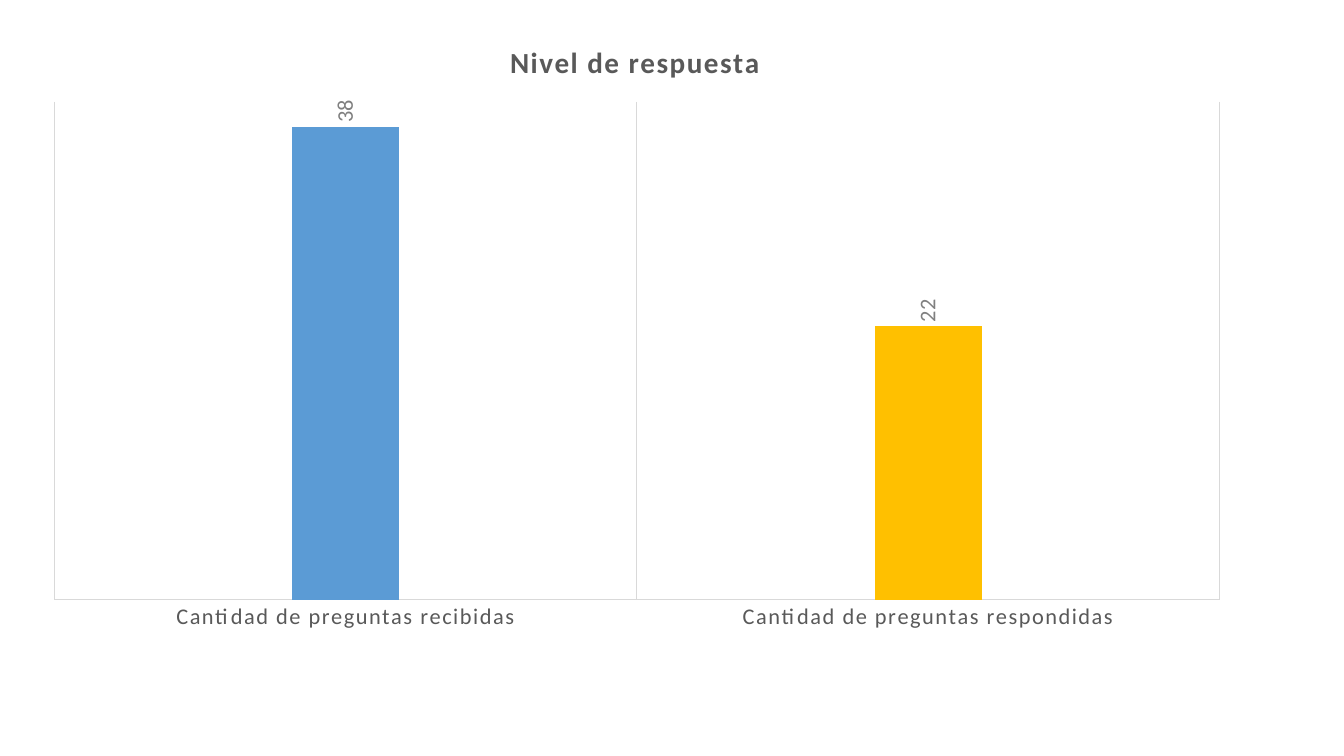
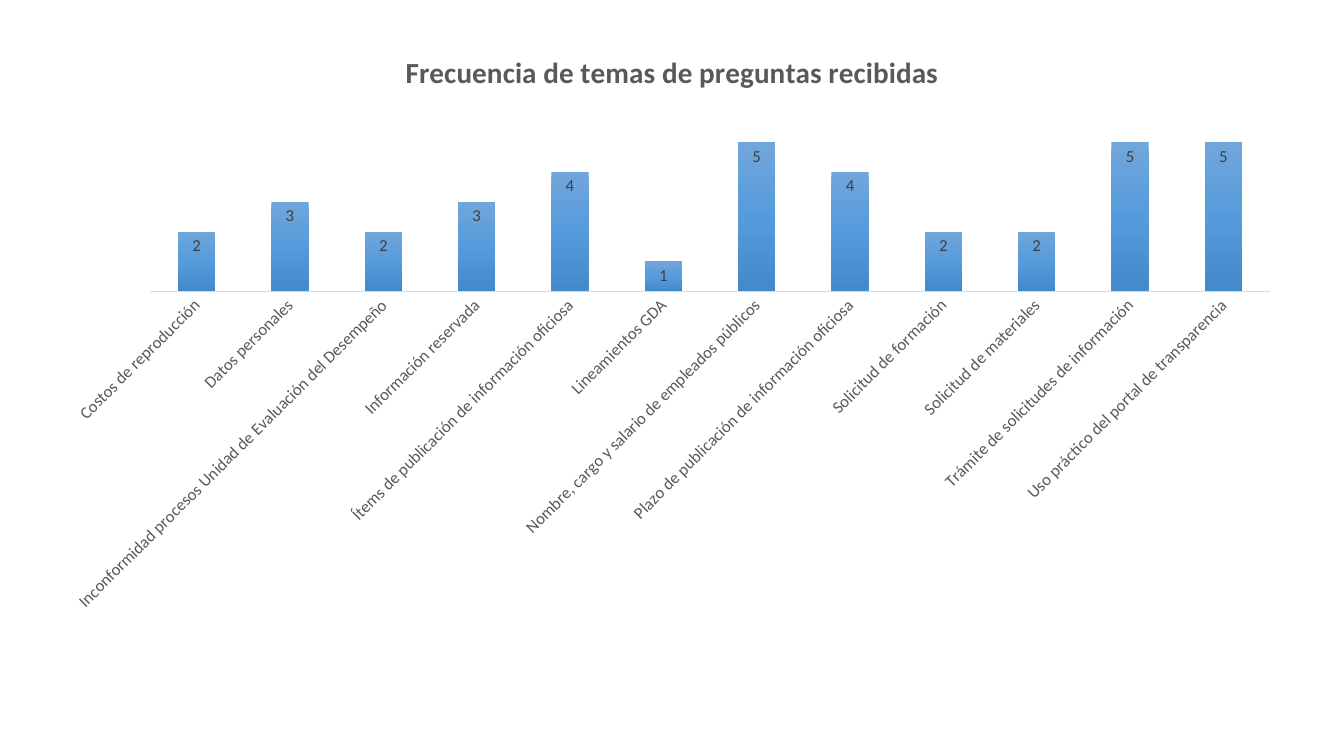
from pptx import Presentation
from pptx.chart.data import CategoryChartData as Data
from pptx.dml.color import RGBColor
from pptx.enum.chart import XL_CHART_TYPE as Kind
from pptx.enum.chart import XL_LABEL_POSITION as Pos
from pptx.enum.chart import XL_TICK_MARK as Tick
from pptx.oxml import parse_xml
from pptx.oxml.ns import nsdecls
from pptx.util import Cm, Pt

FONT = "Calibri"
INK, RULE, BLUE, GOLD = "595959", "D9D9D9", "5B9BD5", "FFC000"


def rgb(code):
    return RGBColor.from_string(code)


def style(font, size, color=INK, bold=False):
    font.name, font.size, font.bold = FONT, Pt(size), bold
    font.color.rgb = rgb(color)


def write(frame, text, space=0, **form):
    """Put one formatted line of text in a frame."""
    frame.text = text
    run = frame.paragraphs[0].runs[0]
    style(run.font, **form)
    if space:
        run.font._element.set("spc", str(space))


def place(parent, index, target, **parts):
    """Give a chart part a fixed place, in fractions of the chart."""
    for old in parent.xpath("c:layout"):
        parent.remove(old)
    inner = '<c:layoutTarget val="inner"/>' if target else ""
    modes = "".join(f'<c:{k}Mode val="edge"/>' for k in "xy")
    sizes = "".join(f'<c:{k} val="{v:.5f}"/>' for k, v in parts.items())
    parent.insert(index, parse_xml(
        f'<c:layout {nsdecls("c")}><c:manualLayout>{inner}{modes}{sizes}'
        '</c:manualLayout></c:layout>'))


def turn(root, where, angle):
    for body in root.xpath(f"{where}/c:txPr/a:bodyPr"):
        body.set("rot", str(angle * 60000))
        body.set("vert", "horz")


def rule(line, width):
    line.color.rgb = rgb(RULE)
    line.width = Pt(width)


def blend(form, stops):
    """Fill a series from top to bottom with several colours."""
    form.fill.gradient()
    grad = form._element.xpath("c:spPr/a:gradFill")[0]
    items = "".join(f'<a:gs pos="{at * 1000}"><a:srgbClr val="{code}"/></a:gs>'
                    for at, code in stops)
    grad.getparent().replace(grad, parse_xml(
        f'<a:gradFill {nsdecls("a")}><a:gsLst>{items}</a:gsLst>'
        '<a:lin ang="5400000" scaled="0"/></a:gradFill>'))


class Deck:
    def __init__(self):
        self.prs = Presentation()
        self.prs.slide_width, self.prs.slide_height = Cm(33.87), Cm(19.05)
        self.slide = self.frame = None

    def page(self):
        self.slide = self.prs.slides.add_slide(self.prs.slide_layouts[6])

    def bars(self, kind, box, rows, top, gap, overlap):
        """Add a column chart with a hidden value axis."""
        data = Data()
        data.categories = [name for name, _ in rows]
        data.add_series("Series 1", [value for _, value in rows])
        self.frame = self.slide.shapes.add_chart(kind, *map(Cm, box), data)
        chart = self.frame.chart
        chart.has_legend = False
        style(chart.font, 10, "000000")
        plot = chart.plots[0]
        plot.gap_width, plot.overlap = gap, overlap
        plot.vary_by_categories = False
        axis = chart.value_axis
        axis.visible = axis.has_major_gridlines = False
        axis.minimum_scale, axis.maximum_scale = 0, top
        return chart

    def across(self, size):
        return Cm(size) / self.frame.width

    def down(self, size):
        return Cm(size) / self.frame.height

    def title(self, chart, text, x, y, space=0):
        chart.has_title = True
        write(chart.chart_title.text_frame, text, space, size=20.8, bold=True)
        place(chart.element.xpath("c:chart/c:title")[0], 1, False,
              x=self.across(x), y=self.down(y))

    def area(self, chart, x, y, w, h):
        place(chart.element.xpath("c:chart/c:plotArea")[0], 0, True,
              x=self.across(x), y=self.down(y),
              w=self.across(w), h=self.down(h))

    def names(self, chart, size, width, angle=0, space=0, grid=False):
        """Format the category axis."""
        axis = chart.category_axis
        axis.major_tick_mark = axis.minor_tick_mark = Tick.NONE
        rule(axis.format.line, width)
        axis.has_major_gridlines = grid
        if grid:
            rule(axis.major_gridlines.format.line, width)
        font = axis.tick_labels.font
        style(font, size)
        if space:
            font._element.set("spc", str(space))
        turn(chart.element, ".//c:catAx", angle)

    def values(self, chart, size, color, pos, angle=0):
        """Show the value of each bar."""
        labels = chart.plots[0].series[0].data_labels
        labels.show_value = True
        labels.position = pos
        style(labels.font, size, color)
        turn(chart.element, ".//c:dLbls", angle)


def level(deck):
    deck.page()
    rows = [("Cantidad de preguntas recibidas", 38),
            ("Cantidad de preguntas respondidas", 22)]
    chart = deck.bars(Kind.COLUMN_CLUSTERED, (0.76, 0.43, 30.61, 15.8),
                      rows, top=40, gap=444, overlap=-90)
    deck.title(chart, "Nivel de respuesta", 11.96, 0.48, space=100)
    deck.area(chart, 0.61, 2.14, 29.36, 12.55)
    deck.names(chart, 16, 0.75, space=120, grid=True)
    series = chart.plots[0].series[0]
    for form, color in ((series.format, BLUE), (series.points[1].format, GOLD)):
        form.fill.solid()
        form.fill.fore_color.rgb = rgb(color)
    deck.values(chart, 16, "808080", Pos.OUTSIDE_END, angle=-90)


def topics(deck):
    deck.page()
    rows = [("Costos de reproducción", 2),
            ("Datos personales", 3),
            ("Inconformidad procesos Unidad de Evaluación del Desempeño", 2),
            ("Información reservada", 3),
            ("Ítems de publicación de información oficiosa", 4),
            ("Lineamientos GDA", 1),
            ("Nombre, cargo y salario de empleados públicos", 5),
            ("Plazo de publicación de información oficiosa", 4),
            ("Solicitud de formación", 2),
            ("Solicitud de materiales", 2),
            ("Trámite de solicitudes de información", 5),
            ("Uso práctico del portal de transparencia", 5)]
    chart = deck.bars(Kind.COLUMN_STACKED, (1.22, 0.71, 31.39, 15.01),
                      rows, top=6, gap=150, overlap=100)
    deck.title(chart, "Frecuencia de temas de preguntas recibidas", 8.87, 0.46)
    deck.area(chart, 2.56, 2.13, 28.23, 4.5)
    deck.names(chart, 12, 1, angle=-45)
    blend(chart.plots[0].series[0].format,
          [(0, "71A6DB"), (50, "559BDB"), (100, "448ACA")])
    deck.values(chart, 12, "404040", Pos.INSIDE_END)


def main():
    deck = Deck()
    level(deck)
    topics(deck)
    deck.prs.save("out.pptx")


if __name__ == "__main__":
    main()
